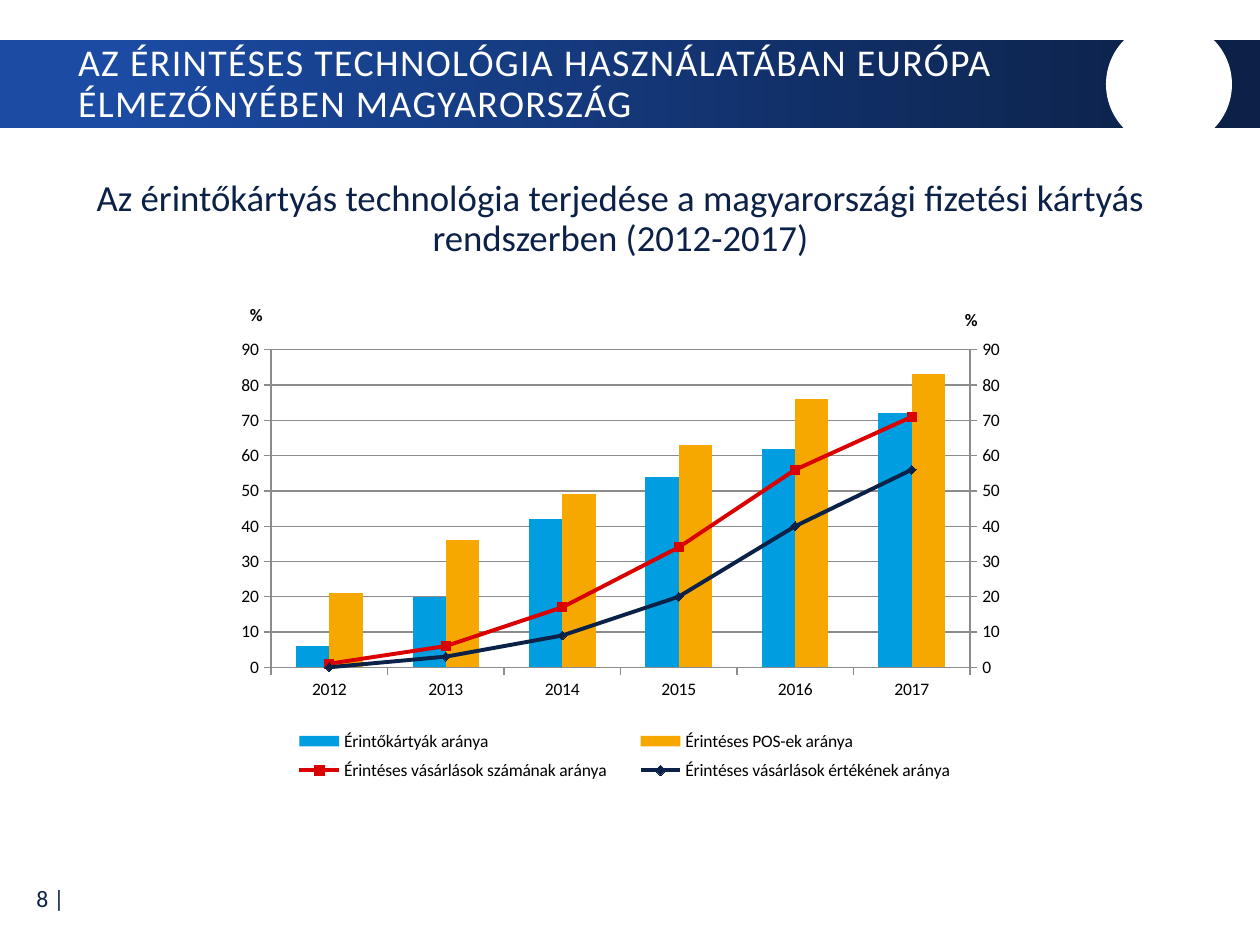
from copy import deepcopy
from dataclasses import dataclass

from lxml import etree
from pptx import Presentation
from pptx import util as u
from pptx.chart.data import CategoryChartData
from pptx.dml.color import RGBColor
from pptx.enum import chart as charts, shapes, text
from pptx.oxml.ns import qn

FONT = "Calibri"
NAVY, WHITE, BLACK, GREY = "0C2148", "FFFFFF", "000000", "8C8C8C"


@dataclass
class Area:
    left: float
    top: float
    width: float
    height: float

    def points(self) -> list:
        return [u.Pt(n) for n in (self.left, self.top, self.width, self.height)]


@dataclass
class Series:
    name: str
    values: tuple
    color: str
    marker: object = None


SERIES = [
    Series("Érintőkártyák aránya", (6, 20, 42, 54, 62, 72), "009EE0"),
    Series("Érintéses POS-ek aránya", (21, 36, 49, 63, 76, 83), "F6A800"),
    Series("Érintéses vásárlások számának aránya", (1, 6, 17, 34, 56, 71),
           "DA0000", charts.XL_MARKER_STYLE.SQUARE),
    Series("Érintéses vásárlások értékének aránya", (0, 3, 9, 20, 40, 56),
           NAVY, charts.XL_MARKER_STYLE.DIAMOND),
]


def rgb(color: str) -> RGBColor:
    return RGBColor.from_string(color)


def apply(target, values: dict) -> None:
    for name, value in values.items():
        setattr(target, name, value)


def set_font(font, size: float, color: str, bold: bool = False) -> None:
    apply(font, {"name": FONT, "size": u.Pt(size), "bold": bold})
    font.color.rgb = rgb(color)


def write(box, words: str, size: float, color: str, align, spacing: float = 1.0):
    frame = box.text_frame
    apply(frame, {"word_wrap": True, "auto_size": text.MSO_AUTO_SIZE.NONE,
                  "vertical_anchor": text.MSO_ANCHOR.MIDDLE})
    para = frame.paragraphs[0]
    apply(para, {"alignment": align, "line_spacing": spacing, "space_before": u.Pt(0)})
    span = para.add_run()
    span.text = words
    set_font(span.font, size, color)
    return span


def add_shape(page, kind, area: Area):
    shape = page.shapes.add_shape(kind, *area.points())
    shape.shadow.inherit = False
    shape.line.fill.background()
    return shape


def child(parent, tag: str, value=None):
    node = etree.SubElement(parent, qn(tag))
    if value is not None:
        node.set("val", str(value))
    return node


def manual_layout(inner: bool = False, **places: float):
    layout = etree.Element(qn("c:layout"))
    manual = child(layout, "c:manualLayout")
    if inner:
        child(manual, "c:layoutTarget", "inner")
    for name in ("x", "y"):
        child(manual, f"c:{name}Mode", "edge")
    for name, value in places.items():
        child(manual, f"c:{name}", value)
    return layout


def remove_children(parent, tag: str) -> None:
    for node in parent.findall(qn(tag)):
        parent.remove(node)


def place_part(part, after: str, layout) -> None:
    """Replace the layout of a chart part, just after the named child."""
    remove_children(part, "c:layout")
    if after:
        part.find(qn(after)).addnext(layout)
    else:
        part.insert(0, layout)


def format_axes(chart) -> None:
    axis = chart.value_axis
    apply(axis, {"minimum_scale": 0, "maximum_scale": 90, "major_unit": 10,
                 "major_tick_mark": charts.XL_TICK_MARK.OUTSIDE})
    apply(axis.tick_labels, {"number_format": "0", "number_format_is_linked": False})
    lines = [axis.format.line, axis.major_gridlines.format.line,
             chart.category_axis.format.line]
    for line in lines:
        line.color.rgb = rgb(GREY)
        line.width = u.Pt(0.75)
    frame = axis.axis_title.text_frame
    frame.text = "%"
    set_font(frame.paragraphs[0].runs[0].font, 10, BLACK, True)
    title = chart.element.find(".//" + qn("c:valAx")).find(qn("c:title"))
    title.find(".//" + qn("a:bodyPr")).set("rot", "0")
    place_part(title, "c:tx", manual_layout(x=0.04, y=0.04))


def move_lines_to_right_axis(chart) -> None:
    plot_area = chart.element.find(".//" + qn("c:plotArea"))
    bars = plot_area.find(qn("c:barChart"))
    lines = etree.Element(qn("c:lineChart"))
    child(lines, "c:grouping", "standard")
    child(lines, "c:varyColors", 0)
    for series in bars.findall(qn("c:ser"))[2:]:
        remove_children(series, "c:invertIfNegative")
        lines.append(series)
    child(lines, "c:marker", 1)
    bars.addnext(lines)

    # Second pair of axes, made from the first
    ids = {"c:catAx": "5001", "c:valAx": "5002"}
    for tag, other in (("c:catAx", "c:valAx"), ("c:valAx", "c:catAx")):
        child(lines, "c:axId", ids[tag])
        axis = deepcopy(plot_area.find(qn(tag)))
        axis.find(qn("c:axId")).set("val", ids[tag])
        axis.find(qn("c:crossAx")).set("val", ids[other])
        if tag == "c:catAx":
            axis.find(qn("c:delete")).set("val", "1")
        else:
            axis.find(qn("c:axPos")).set("val", "r")
            axis.find(qn("c:crosses")).set("val", "max")
            remove_children(axis, "c:majorGridlines")
            place_part(axis.find(qn("c:title")), "c:tx", manual_layout(x=0.92, y=0.05))
        plot_area.findall(qn("c:valAx"))[-1].addnext(axis)
    place_part(plot_area, "", manual_layout(True, x=0.07, y=0.135, w=0.86, h=0.61))


def add_chart(page, area: Area) -> None:
    data = CategoryChartData()
    data.categories = [str(year) for year in range(2012, 2018)]
    for item in SERIES:
        data.add_series(item.name, item.values)
    chart = page.shapes.add_chart(charts.XL_CHART_TYPE.COLUMN_CLUSTERED,
                                  *area.points(), data).chart
    apply(chart, {"has_title": False, "has_legend": True})
    set_font(chart.font, 10, BLACK)
    apply(chart.legend, {"position": charts.XL_LEGEND_POSITION.BOTTOM,
                         "include_in_layout": False})
    place_part(chart.element.find(".//" + qn("c:legend")), "c:legendPos",
               manual_layout(x=0.07, y=0.85, w=0.87, h=0.13))
    format_axes(chart)
    move_lines_to_right_axis(chart)
    apply(chart.plots[0], {"gap_width": 150, "overlap": 0, "vary_by_categories": False})

    for item, series in zip(SERIES, (s for plot in chart.plots for s in plot.series)):
        fill = series.format.fill
        if item.marker is not None:
            series.smooth = False
            series.format.line.color.rgb = rgb(item.color)
            series.format.line.width = u.Pt(2.25)
            apply(series.marker, {"style": item.marker, "size": 5})
            series.marker.format.line.color.rgb = rgb(item.color)
            fill = series.marker.format.fill
        fill.solid()
        fill.fore_color.rgb = rgb(item.color)


def main() -> None:
    deck = Presentation()
    apply(deck, {"slide_width": u.Pt(720), "slide_height": u.Pt(540)})
    page = deck.slides.add_slide(deck.slide_layouts[5])

    # Header band with its round cut-out
    band = add_shape(page, shapes.MSO_SHAPE.RECTANGLE, Area(0, 23, 720, 50.4))
    band.fill.gradient()
    band.fill.gradient_angle = 0
    for stop, (position, color) in zip(band.fill.gradient_stops,
                                       ((0.09, "1B4BA3"), (0.95, NAVY))):
        stop.position = position
        stop.color.rgb = rgb(color)
    circle = add_shape(page, shapes.MSO_SHAPE.OVAL, Area(632, 12.2, 72, 72))
    circle.fill.solid()
    circle.fill.fore_color.rgb = rgb(WHITE)

    # Title, brought in front of the band
    title = page.shapes.title
    apply(title, dict(zip(("left", "top", "width", "height"),
                          Area(37.4, 24.5, 599, 48.2).points())))
    span = write(title, "AZ ÉRINTÉSES TECHNOLÓGIA HASZNÁLATÁBAN EURÓPA "
                 "ÉLMEZŐNYÉBEN MAGYARORSZÁG", 21.6, WHITE, text.PP_ALIGN.LEFT, 0.9)
    span.font._element.set("spc", "80")
    page.shapes._spTree.append(title._element)

    # Subtitle and page number
    subtitle = page.shapes.add_textbox(*Area(37.4, 93.6, 634.3, 64).points())
    write(subtitle, "Az érintőkártyás technológia terjedése a magyarországi "
          "fizetési kártyás rendszerben (2012-2017)", 21, NAVY, text.PP_ALIGN.CENTER, 0.9)
    number = page.shapes.add_textbox(*Area(0.7, 499.7, 43.2, 26.6).points())
    write(number, "8 |", 13.5, NAVY, text.PP_ALIGN.RIGHT)

    add_chart(page, Area(122.4, 159.8, 464.4, 297.4))
    deck.save("out.pptx")


if __name__ == "__main__":
    main()
